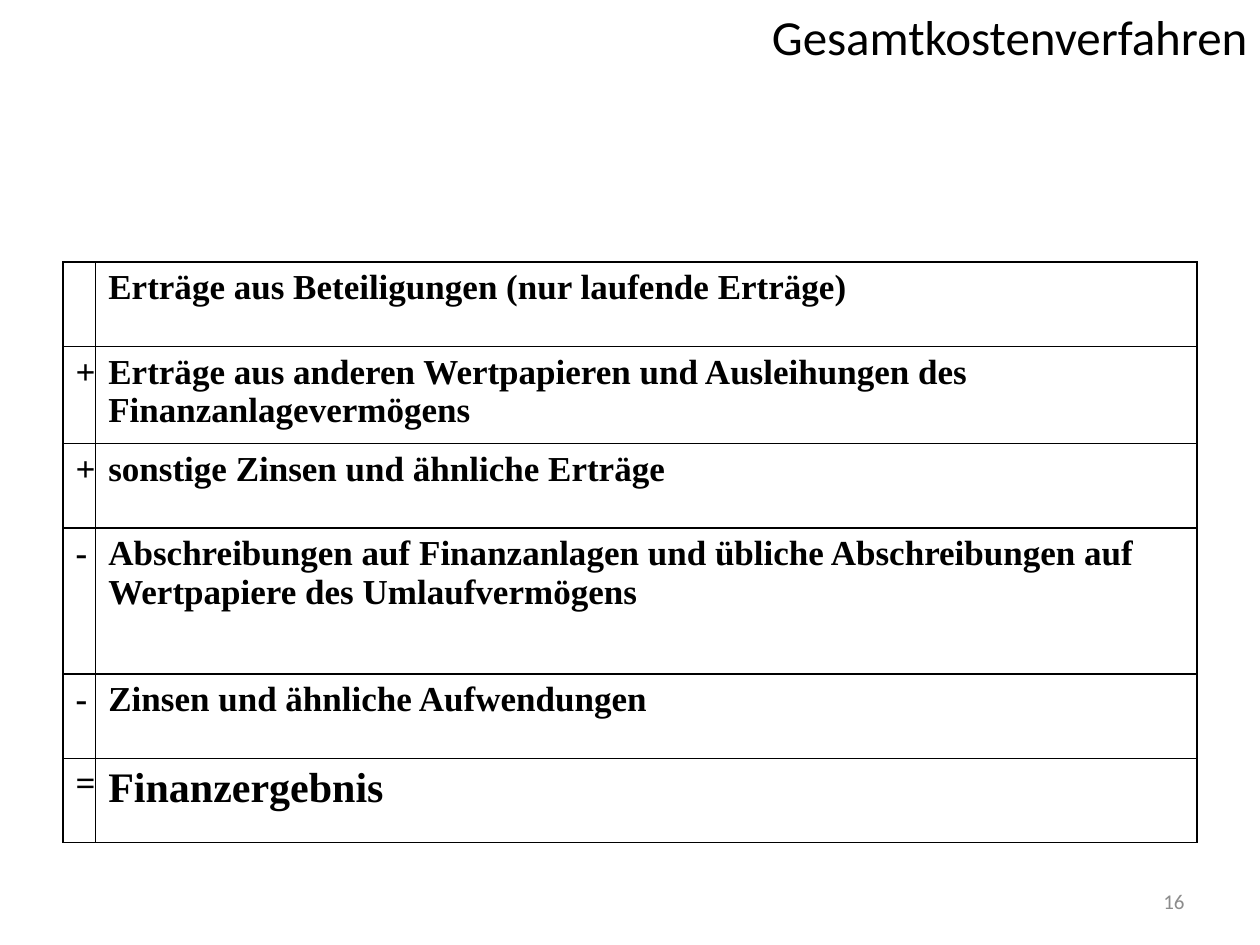
import dataclasses

import pptx
import pptx.dml.color
import pptx.enum.text
import pptx.oxml
import pptx.oxml.ns
import pptx.util

ALIGN = pptx.enum.text.PP_ALIGN
ANCHOR = pptx.enum.text.MSO_ANCHOR


@dataclasses.dataclass(frozen=True)
class Theme:
    ink: str = "000000"
    paper: str = "FFFFFF"
    muted: str = "8C8C8C"
    heading_font: str = "Calibri"
    table_font: str = "Times New Roman"
    title_size: int = 28
    row_size: int = 20
    result_size: int = 24
    number_size: int = 12
    border: int = 1


class Deck:
    """Holds the theme and the current slide, and places elements by shares of the slide size."""

    def __init__(self, theme, width, height):
        self.theme = theme
        self.prs = pptx.Presentation()
        self.prs.slide_width = pptx.util.Inches(width)
        self.prs.slide_height = pptx.util.Inches(height)
        self.s = self.prs.slides.add_slide(self.prs.slide_layouts[5])

    def box(self, x, y, w, h):
        width, height = self.prs.slide_width, self.prs.slide_height
        return [round(v) for v in (x * width, y * height, w * width, h * height)]

    def set_text(self, tf, text, size, font, color, align, bold=False):
        tf.text = text
        p = tf.paragraphs[0]
        p.alignment = align
        for r in p.runs:
            r.font.size = pptx.util.Pt(size)
            r.font.name = font
            r.font.bold = bold
            r.font.color.rgb = pptx.dml.color.RGBColor.from_string(color)

    def title(self, text, *place):
        sp = self.s.shapes.title
        sp.left, sp.top, sp.width, sp.height = self.box(*place)
        tf = sp.text_frame
        tf.vertical_anchor = ANCHOR.MIDDLE
        self.set_text(tf, text, self.theme.title_size, self.theme.heading_font,
                      self.theme.ink, ALIGN.RIGHT)

    def page_number(self, text, *place):
        tf = self.s.shapes.add_textbox(*self.box(*place)).text_frame
        tf.word_wrap = True
        tf.vertical_anchor = ANCHOR.MIDDLE
        self.set_text(tf, text, self.theme.number_size, self.theme.heading_font,
                      self.theme.muted, ALIGN.RIGHT)

    def borders(self, cell):
        tc_pr = cell._tc.get_or_add_tcPr()
        width = pptx.util.Pt(self.theme.border)
        for i, side in enumerate(("lnL", "lnR", "lnT", "lnB")):
            tc_pr.insert(i, pptx.oxml.parse_xml(
                f'<a:{side} {pptx.oxml.ns.nsdecls("a")} w="{width}"><a:solidFill>'
                f'<a:srgbClr val="{self.theme.ink}"/></a:solidFill></a:{side}>'))

    def table(self, rows, widths, heights, *place):
        table = self.s.shapes.add_table(len(rows), len(widths), *self.box(*place)).table
        table.first_row = table.horz_banding = False
        for column, width in zip(table.columns, widths):
            column.width = pptx.util.Inches(width)
        for row, height, texts in zip(table.rows, heights, rows):
            row.height = pptx.util.Inches(height)
            for cell, text, align in zip(row.cells, texts, (ALIGN.CENTER, ALIGN.LEFT)):
                is_result = texts is rows[-1] and align == ALIGN.LEFT
                size = self.theme.result_size if is_result else self.theme.row_size
                self.set_text(cell.text_frame, text, size, self.theme.table_font,
                              self.theme.ink, align, bold=True)
                cell.fill.solid()
                cell.fill.fore_color.rgb = pptx.dml.color.RGBColor.from_string(self.theme.paper)
                self.borders(cell)


def main():
    deck = Deck(Theme(), 10, 7.5)
    deck.title("Gesamtkostenverfahren", 0.1, 0, 0.9, 0.57 / 7.5)
    rows = [
        ("", "Erträge aus Beteiligungen (nur laufende Erträge)"),
        ("+", "Erträge aus anderen Wertpapieren und Ausleihungen des Finanzanlagevermögens"),
        ("+", "sonstige Zinsen und ähnliche Erträge"),
        ("-", "Abschreibungen auf Finanzanlagen und übliche Abschreibungen auf "
              "Wertpapiere des Umlaufvermögens"),
        ("-", "Zinsen und ähnliche Aufwendungen"),
        ("=", "Finanzergebnis"),
    ]
    deck.table(rows, (0.26, 8.74), (0.67, 0.77, 0.67, 1.16, 0.67, 0.67),
               0.05, 2.08 / 7.5, 0.9, 4.6 / 7.5)
    deck.page_number("16", 0.72, 6.95 / 7.5, 0.23, 0.4 / 7.5)
    deck.prs.save("out.pptx")


if __name__ == "__main__":
    main()
